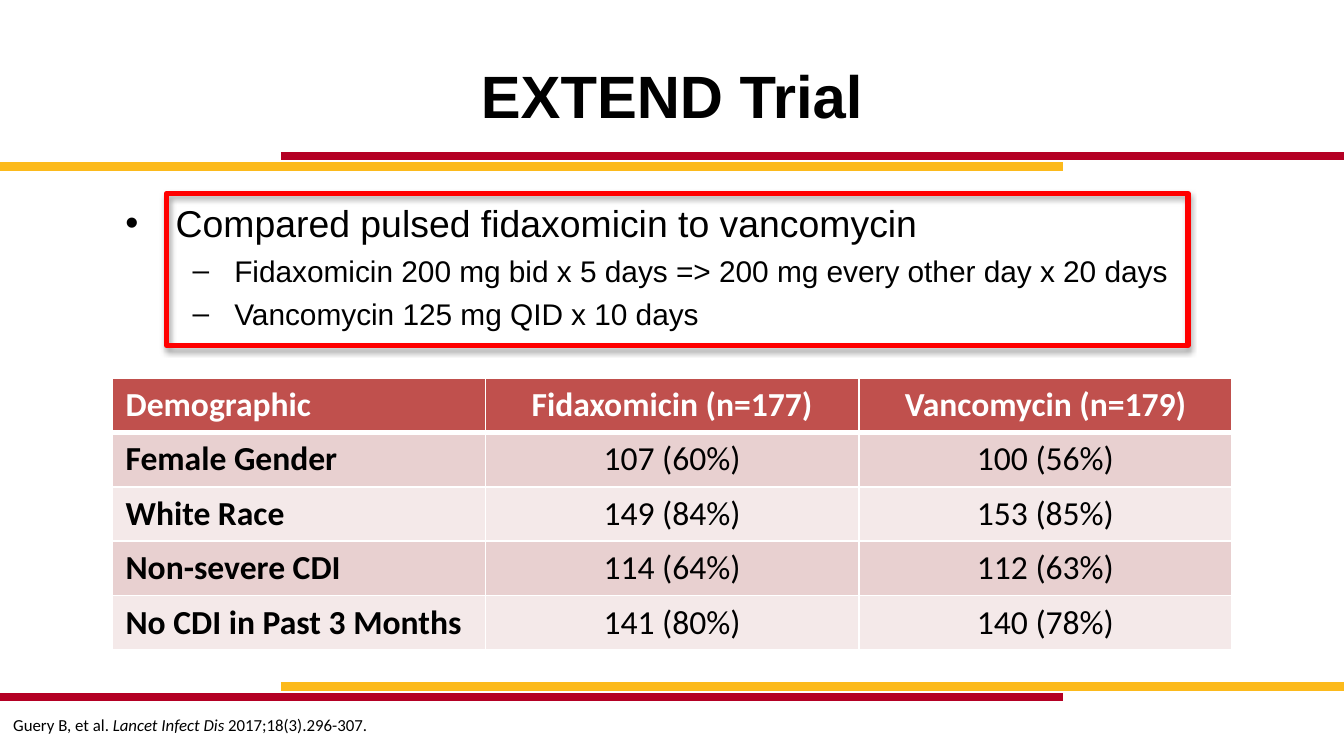
"""Build the EXTEND Trial slide."""
from dataclasses import dataclass

from lxml.etree import SubElement
from pptx import Presentation
from pptx.dml.color import RGBColor
from pptx.enum.shapes import MSO_CONNECTOR, MSO_SHAPE
from pptx.enum.text import MSO_ANCHOR, PP_ALIGN
from pptx.oxml.ns import qn
from pptx.util import Cm, Pt

CRIMSON, GOLD, RED = "B40024", "FCBA1C", "FF0000"
BLACK, WHITE = "000000", "FFFFFF"
HEADER_FILL, BAND_FILLS = "C0504D", ("E8D0D0", "F4E9E9")
SLIDE_WIDTH, STRIPE_INSET = 25.4, 5.31


@dataclass(frozen=True)
class Box:
    """A rectangle in centimetres."""
    left: float
    top: float
    width: float
    height: float

    def lengths(self) -> tuple:
        """Return the four sides as slide lengths."""
        return Cm(self.left), Cm(self.top), Cm(self.width), Cm(self.height)


@dataclass(frozen=True)
class Stripe:
    """A horizontal line that touches one slide edge."""
    top: float
    color: str
    touches_left: bool


@dataclass(frozen=True)
class TextRun:
    """A piece of text with one look."""
    text: str
    size: float
    font: str
    color: str = BLACK
    bold: bool = False
    italic: bool = False


@dataclass(frozen=True)
class Bullet:
    """A bulleted line with its indents in centimetres."""
    text: str
    size: float
    mark: str
    margin: float
    hanging: float
    level: int = 0


STRIPES = (
    Stripe(13.18, CRIMSON, True),
    Stripe(2.95, CRIMSON, False),
    Stripe(3.15, GOLD, True),
    Stripe(12.98, GOLD, False),
)
BULLETS = (
    Bullet("Compared pulsed fidaxomicin to vancomycin", 20, "•", 0.95, 0.95),
    Bullet("Fidaxomicin 200 mg bid x 5 days => 200 mg every other day x 20 days", 16, "–", 2.06, 0.79, 1),
    Bullet("Vancomycin 125 mg QID x 10 days", 16, "–", 2.06, 0.79, 1),
)
CITATION = (
    TextRun("Guery B, et al. ", 9, "Calibri"),
    TextRun("Lancet Infect Dis", 9, "Calibri", italic=True),
    TextRun(" 2017;18(3).296-307.", 9, "Calibri"),
)
DEMOGRAPHICS = (
    ("Demographic", "Fidaxomicin (n=177)", "Vancomycin (n=179)"),
    ("Female Gender", "107 (60%)", "100 (56%)"),
    ("White Race", "149 (84%)", "153 (85%)"),
    ("Non-severe CDI", "114 (64%)", "112 (63%)"),
    ("No CDI in Past 3 Months", "141 (80%)", "140 (78%)"),
)


def rgb(color: str) -> RGBColor:
    """Turn a hex string into a colour."""
    return RGBColor.from_string(color)


def add_run(paragraph, text_run: TextRun) -> None:
    """Append one formatted run."""
    run = paragraph.add_run()
    run.text = text_run.text
    run.font.size = Pt(text_run.size)
    run.font.name = text_run.font
    run.font.bold = text_run.bold
    run.font.italic = text_run.italic
    run.font.color.rgb = rgb(text_run.color)


def add_text_frame(slide, box: Box, anchor=MSO_ANCHOR.TOP):
    """Add a wrapping text box and return its frame."""
    frame = slide.shapes.add_textbox(*box.lengths()).text_frame
    frame.word_wrap = True
    frame.vertical_anchor = anchor
    return frame


def add_stripe(slide, stripe: Stripe) -> None:
    """Draw one coloured stripe."""
    start = 0 if stripe.touches_left else STRIPE_INSET
    end = start + SLIDE_WIDTH - STRIPE_INSET
    connector = slide.shapes.add_connector(
        MSO_CONNECTOR.STRAIGHT, Cm(start), Cm(stripe.top), Cm(end), Cm(stripe.top))
    connector.line.color.rgb = rgb(stripe.color)
    connector.line.width = Pt(4.5)
    SubElement(connector._element.spPr, qn("a:effectLst"))


def add_bullets(slide, box: Box, bullets: tuple) -> None:
    """Write the bulleted list."""
    frame = add_text_frame(slide, box)
    for index, bullet in enumerate(bullets):
        paragraph = frame.add_paragraph() if index else frame.paragraphs[0]
        paragraph.level = bullet.level
        if index:
            paragraph.space_before = Pt(4)
        properties = paragraph._p.get_or_add_pPr()
        properties.set("marL", str(Cm(bullet.margin)))
        properties.set("indent", str(-Cm(bullet.hanging)))
        SubElement(properties, qn("a:buFont"), typeface="Arial")
        SubElement(properties, qn("a:buChar"), char=bullet.mark)
        add_run(paragraph, TextRun(bullet.text, bullet.size, "Arial"))


def add_border(cell, side: str, width: float) -> None:
    """Give one side of a cell a white border."""
    line = SubElement(cell._tc.get_or_add_tcPr(), qn(f"a:ln{side}"), w=str(Pt(width)))
    SubElement(SubElement(line, qn("a:solidFill")), qn("a:srgbClr"), val=WHITE)


def add_demographics(slide, box: Box, rows: tuple) -> None:
    """Draw the table with a header and banded rows."""
    table = slide.shapes.add_table(len(rows), len(rows[0]), *box.lengths()).table
    for row_index, values in enumerate(rows):
        header = row_index == 0
        fill = HEADER_FILL if header else BAND_FILLS[(row_index - 1) % 2]
        widths = {"L": 1, "R": 1, "T": 3 if row_index == 1 else 1, "B": 3 if header else 1}
        for column_index, value in enumerate(values):
            cell = table.cell(row_index, column_index)
            for side, width in widths.items():
                add_border(cell, side, width)
            cell.fill.solid()
            cell.fill.fore_color.rgb = rgb(fill)
            paragraph = cell.text_frame.paragraphs[0]
            paragraph.alignment = PP_ALIGN.CENTER if column_index else PP_ALIGN.LEFT
            add_run(paragraph, TextRun(value, 18, "Calibri", WHITE if header else BLACK,
                                       bold=header or column_index == 0))


def add_highlight(slide, box: Box) -> None:
    """Frame the regimens in red with a soft shadow."""
    shape = slide.shapes.add_shape(MSO_SHAPE.RECTANGLE, *box.lengths())
    shape.fill.background()
    shape.line.color.rgb = rgb(RED)
    shape.line.width = Pt(3)
    shape.shadow.inherit = False
    effects = shape._element.spPr.find(qn("a:effectLst"))
    shadow = SubElement(effects, qn("a:outerShdw"), blurRad=str(Pt(3.1)),
                        dist=str(Pt(1.8)), dir="5400000", rotWithShape="0")
    color = SubElement(shadow, qn("a:srgbClr"), val=BLACK)
    SubElement(color, qn("a:alpha"), val="35000")


def main() -> None:
    """Build and save the presentation."""
    presentation = Presentation()
    presentation.slide_width, presentation.slide_height = Cm(SLIDE_WIDTH), Cm(14.29)
    slide = presentation.slides.add_slide(presentation.slide_layouts[6])
    for stripe in STRIPES:
        add_stripe(slide, stripe)
    title = add_text_frame(slide, Box(1.27, 0.6, 22.86, 2.38), MSO_ANCHOR.MIDDLE).paragraphs[0]
    title.alignment = PP_ALIGN.CENTER
    add_run(title, TextRun("EXTEND Trial", 32, "Arial", bold=True))
    add_bullets(slide, Box(2.12, 3.66, 21.17, 3.12), BULLETS)
    citation = add_text_frame(slide, Box(0, 13.39, 7.9, 0.64)).paragraphs[0]
    for text_run in CITATION:
        add_run(citation, text_run)
    add_demographics(slide, Box(2.12, 7.14, 21.17, 5.15), DEMOGRAPHICS)
    add_highlight(slide, Box(3.15, 3.66, 19.3, 2.87))
    presentation.save("out.pptx")


if __name__ == "__main__":
    main()
